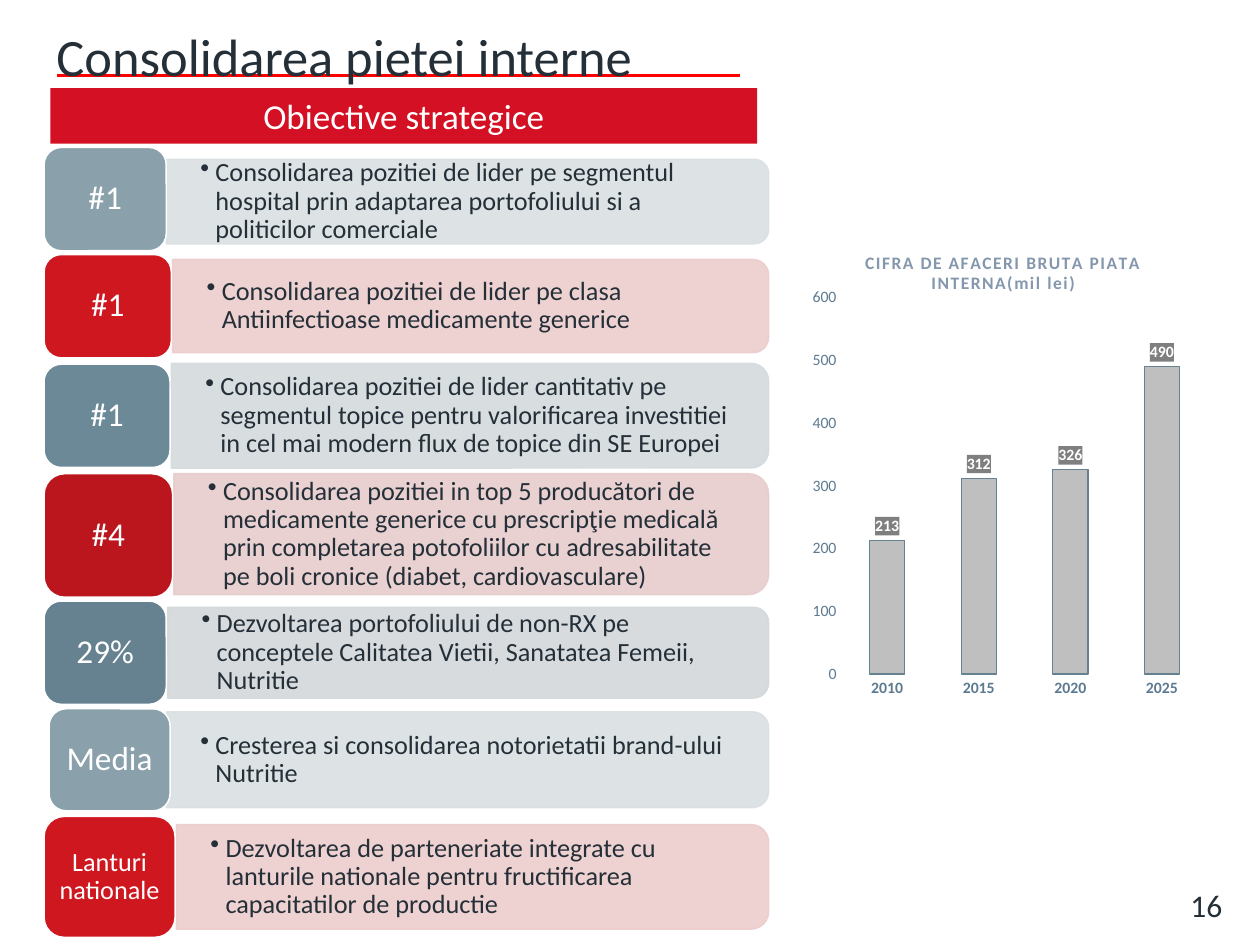
import pptx
import pptx.util
import pptx.chart.data
import pptx.dml.color
import pptx.enum.chart
import pptx.enum.shapes
import pptx.enum.text
import pptx.oxml
import pptx.oxml.ns
import lxml.etree

Inches = pptx.util.Inches
Pt = pptx.util.Pt
Align = pptx.enum.text.PP_ALIGN
Anchor = pptx.enum.text.MSO_ANCHOR
Shape = pptx.enum.shapes.MSO_SHAPE
qn = pptx.oxml.ns.qn
rgb = pptx.dml.color.RGBColor.from_string


class Theme:
    font = "Calibri"
    ink = "242F38"
    white = "FFFFFF"
    rule = "FF0000"
    head = "D41024"
    axis = "5D7A91"
    title = "8497AD"
    column = "BFBFBF"
    edge = "668290"
    label = "7F7F7F"
    big, banner, badge, page, body, chart, tick = 30, 20, 19, 18, 15, 10, 9


def style(font, size, color, bold=False):
    font.name = Theme.font
    font.size = Pt(size)
    font.bold = bold
    font.color.rgb = rgb(color)


def write(shape, text, size, color, align=Align.LEFT, anchor=Anchor.MIDDLE, pads=(0.1, 0.05)):
    frame = shape.text_frame
    frame.word_wrap = True
    frame.vertical_anchor = anchor
    frame.margin_left = frame.margin_right = Inches(pads[0])
    frame.margin_top = frame.margin_bottom = Inches(pads[1])
    frame.text = text
    para = frame.paragraphs[0]
    para.alignment = align
    style(para.runs[0].font, size, color)
    return para


deck = pptx.Presentation()
deck.slide_width, deck.slide_height = Inches(10), Inches(7.5)
slide = deck.slides.add_slide(deck.slide_layouts[6])
shapes = slide.shapes

rule = shapes.add_connector(pptx.enum.shapes.MSO_CONNECTOR.STRAIGHT,
                            Inches(0.45), Inches(0.6), Inches(5.87), Inches(0.6))
rule.line.color.rgb = rgb(Theme.rule)
rule.line.width = Pt(1.5)
lxml.etree.SubElement(rule._element.spPr, qn("a:effectLst"))

title = shapes.add_textbox(Inches(0.35), Inches(-0.03), Inches(9), Inches(0.77))
write(title, "Consolidarea pietei interne", Theme.big, Theme.ink, anchor=Anchor.BOTTOM)

page = shapes.add_textbox(Inches(9.35), Inches(6.98), Inches(0.63), Inches(0.37))
write(page, "16", Theme.page, Theme.ink, anchor=Anchor.TOP)

rows = [
    ("#1", 0.35, 0.97, 0.82, 1.58, "8AA1AC", 1.32, 0.67, 1.6, "DAE0E3",
     "Consolidarea pozitiei de lider pe segmentul hospital prin adaptarea portofoliului si a politicilor comerciale"),
    ("#1", 0.35, 1.01, 0.82, 2.43, "CF1720", 1.37, 0.74, 2.43, "EDCCCD",
     "Consolidarea pozitiei de lider pe clasa Antiinfectioase medicamente generice"),
    ("#1", 0.35, 1, 0.82, 3.3, "6C8997", 1.36, 0.83, 3.3, "D4DADD",
     "Consolidarea pozitiei de lider cantitativ pe segmentul topice pentru valorificarea investitiei "
     "in cel mai modern flux de topice din SE Europei"),
    ("#4", 0.35, 1.02, 0.98, 4.25, "BB151D", 1.38, 0.96, 4.24, "E7CCCD",
     "Consolidarea pozitiei in top 5 producători de medicamente generice cu prescripţie medicală "
     "prin completarea potofoliilor cu adresabilitate pe boli cronice (diabet, cardiovasculare)"),
    ("29%", 0.35, 0.97, 0.82, 5.18, "668290", 1.33, 0.72, 5.18, "D3D8DB",
     "Dezvoltarea portofoliului de non-RX pe conceptele Calitatea Vietii, Sanatatea Femeii, Nutritie"),
    ("Media", 0.39, 0.96, 0.81, 6.03, "8AA1AC", 1.32, 0.76, 6.03, "DAE0E3",
     "Cresterea si consolidarea notorietatii brand-ului Nutritie"),
    ("Lanturi nationale", 0.35, 1.04, 0.96, 6.96, "CF1720", 1.4, 0.83, 6.96, "EDCCCD",
     "Dezvoltarea de parteneriate integrate cu lanturile nationale pentru fructificarea capacitatilor de productie"),
]
right = 6.1

for name, left, width, height, mid, color, start, thick, centre, tint, goal in rows:
    span = right - start
    bar = shapes.add_shape(Shape.ROUND_2_SAME_RECTANGLE,
                           Inches((start + right - thick) / 2), Inches(centre - span / 2),
                           Inches(thick), Inches(span))
    bar.rotation = 90
    badge = shapes.add_shape(Shape.ROUNDED_RECTANGLE, Inches(left), Inches(mid - height / 2),
                             Inches(width), Inches(height))
    for part, fill, line in ((bar, tint, tint), (badge, color, Theme.white)):
        part.shadow.inherit = False
        part.fill.solid()
        part.fill.fore_color.rgb = rgb(fill)
        part.line.color.rgb = rgb(line)
        part.line.width = Pt(0.85)
    for tone in bar._element.spPr.iter(qn("a:srgbClr")):
        lxml.etree.SubElement(tone, qn("a:alpha")).set("val", "90000")

    size = Theme.body if " " in name else Theme.badge
    para = write(badge, name, size, Theme.white, Align.CENTER, pads=(0.06, 0.03))
    para.line_spacing = 0.9

    box = shapes.add_textbox(Inches(start), Inches(centre - thick / 2 + 0.04),
                             Inches(span - 0.04), Inches(thick - 0.08))
    para = write(box, goal, Theme.body, Theme.ink, pads=(0.27, 0.14))
    para.level = 1
    para.line_spacing = 0.9
    props = para._p.get_or_add_pPr()
    props.set("marL", str(Inches(0.12)))
    props.set("indent", str(Inches(-0.12)))
    lxml.etree.SubElement(props, qn("a:buChar")).set("char", "•")

data = pptx.chart.data.CategoryChartData()
data.categories = ["2010", "2015", "2020", "2025"]
data.add_series("Series 1", (213, 312, 326, 490))
chart = shapes.add_chart(pptx.enum.chart.XL_CHART_TYPE.COLUMN_CLUSTERED,
                         Inches(6.42), Inches(1.78), Inches(3.23), Inches(3.88), data).chart
style(chart.font, Theme.chart, Theme.ink)
chart.has_legend = False
chart.has_title = True
frame = chart.chart_title.text_frame
frame.text = "CIFRA DE AFACERI BRUTA PIATA INTERNA(mil lei)"
run = frame.paragraphs[0].runs[0]
style(run.font, Theme.chart, Theme.title, True)
run._r.get_or_add_rPr().set("spc", "100")
chart.chart_title.include_in_layout = False

tree = chart._chartSpace.chart
for host, spot, sides in (
    (tree.find(qn("c:title")), 1, {"xMode": "edge", "yMode": "edge", "x": 0.13, "y": 0.05}),
    (tree.plotArea, 0, {"layoutTarget": "inner", "xMode": "edge", "yMode": "edge",
                        "x": 0.08, "y": 0.15, "w": 0.9, "h": 0.77}),
):
    for old in host.findall(qn("c:layout")):
        host.remove(old)
    layout = lxml.etree.Element(qn("c:layout"))
    manual = lxml.etree.SubElement(layout, qn("c:manualLayout"))
    for key, value in sides.items():
        lxml.etree.SubElement(manual, qn("c:" + key)).set("val", str(value))
    host.insert(spot, layout)

for axis, bold in ((chart.category_axis, True), (chart.value_axis, False)):
    axis.major_tick_mark = axis.minor_tick_mark = pptx.enum.chart.XL_TICK_MARK.NONE
    axis.has_major_gridlines = False
    axis.format.line.fill.background()
    style(axis.tick_labels.font, Theme.tick, Theme.axis, bold)
scale = chart.value_axis
scale.minimum_scale, scale.maximum_scale, scale.major_unit = 0, 600, 100
scale.tick_labels.number_format = "0"
scale.tick_labels.number_format_is_linked = False

plot = chart.plots[0]
plot.gap_width = 160
plot.vary_by_categories = False
series = plot.series[0]
series.format.fill.solid()
series.format.fill.fore_color.rgb = rgb(Theme.column)
series.format.line.color.rgb = rgb(Theme.edge)
series.format.line.width = Pt(0.75)
labels = series.data_labels
labels.show_value = True
labels.number_format = "0"
labels.number_format_is_linked = False
labels.position = pptx.enum.chart.XL_LABEL_POSITION.OUTSIDE_END
style(labels.font, Theme.tick, Theme.white, True)
patch = lxml.etree.Element(qn("c:spPr"))
solid = lxml.etree.SubElement(patch, qn("a:solidFill"))
lxml.etree.SubElement(solid, qn("a:srgbClr")).set("val", Theme.label)
labels._element.find(qn("c:txPr")).addprevious(patch)

banner = shapes.add_shape(Shape.RECTANGLE, Inches(0.4), Inches(0.7), Inches(5.61), Inches(0.44))
banner.shadow.inherit = False
banner.fill.solid()
banner.fill.fore_color.rgb = rgb(Theme.head)
banner.line.fill.background()
write(banner, "Obiective strategice", Theme.banner, Theme.white, Align.CENTER)

deck.save("out.pptx")
